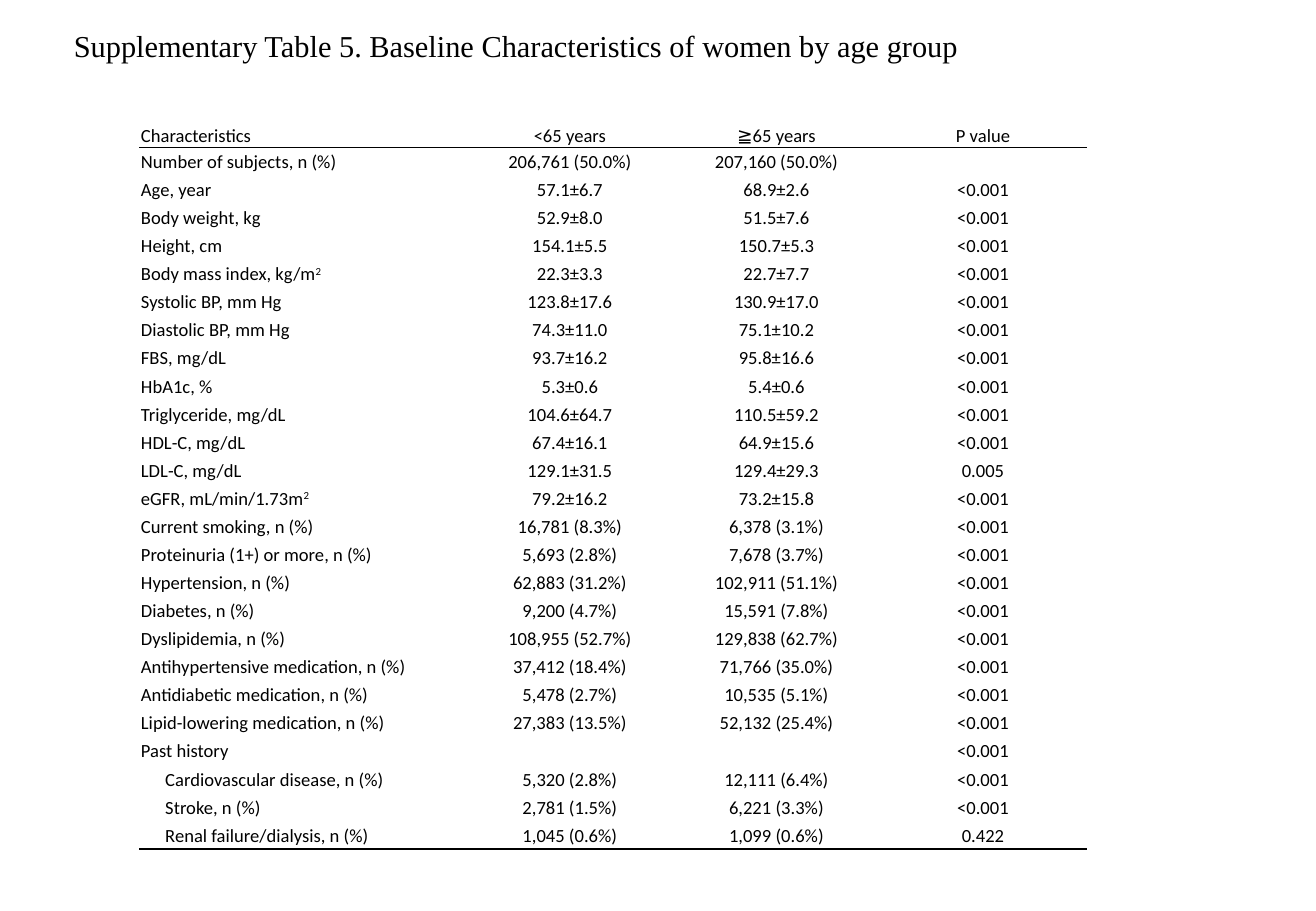
from lxml.etree import SubElement
from pptx import Presentation
from pptx.dml.color import RGBColor
from pptx.enum.text import MSO_ANCHOR, PP_ALIGN
from pptx.oxml.ns import qn
from pptx.util import Inches, Pt

SLIDE_W, SLIDE_H = Inches(10.83), Inches(7.5)
COLORS = {"ink": "000000", "paper": "FFFFFF"}
TABLE_FONT, TABLE_SIZE = "Calibri", 11

# Table grid, in inches
TABLE_LEFT, TABLE_TOP, TABLE_HEIGHT = 1.15, 1.02, 5.96
COLUMN_WIDTHS = (2.69, 1.7, 1.7, 1.7)
HEADER_HEIGHT = 0.18
CELL_INSET, SUBITEM_INSET = 0.01, 0.21

# Label, younger group, older group, P value; ^ starts a superscript
HEADER = ("Characteristics", "<65 years", "≧65 years", "P value")
LOW_P = "<0.001"
BASELINE = [
    ("Number of subjects, n (%)", "206,761 (50.0%)", "207,160 (50.0%)", ""),
    ("Age, year", "57.1±6.7", "68.9±2.6", LOW_P),
    ("Body weight, kg", "52.9±8.0", "51.5±7.6", LOW_P),
    ("Height, cm", "154.1±5.5", "150.7±5.3", LOW_P),
    ("Body mass index, kg/m^2", "22.3±3.3", "22.7±7.7", LOW_P),
    ("Systolic BP, mm Hg", "123.8±17.6", "130.9±17.0", LOW_P),
    ("Diastolic BP, mm Hg", "74.3±11.0", "75.1±10.2", LOW_P),
    ("FBS, mg/dL", "93.7±16.2", "95.8±16.6", LOW_P),
    ("HbA1c, %", "5.3±0.6", "5.4±0.6", LOW_P),
    ("Triglyceride, mg/dL", "104.6±64.7", "110.5±59.2", LOW_P),
    ("HDL-C, mg/dL", "67.4±16.1", "64.9±15.6", LOW_P),
    ("LDL-C, mg/dL", "129.1±31.5", "129.4±29.3", "0.005"),
    ("eGFR, mL/min/1.73m^2", "79.2±16.2", "73.2±15.8", LOW_P),
    ("Current smoking, n (%)", "16,781 (8.3%)", "6,378 (3.1%)", LOW_P),
    ("Proteinuria (1+) or more, n (%)", "5,693 (2.8%)", "7,678 (3.7%)", LOW_P),
    ("Hypertension, n (%)", "62,883 (31.2%)", "102,911 (51.1%)", LOW_P),
    ("Diabetes, n (%)", "9,200 (4.7%)", "15,591 (7.8%)", LOW_P),
    ("Dyslipidemia, n (%)", "108,955 (52.7%)", "129,838 (62.7%)", LOW_P),
    ("Antihypertensive medication, n (%)", "37,412 (18.4%)", "71,766 (35.0%)", LOW_P),
    ("Antidiabetic medication, n (%)", "5,478 (2.7%)", "10,535 (5.1%)", LOW_P),
    ("Lipid-lowering medication, n (%)", "27,383 (13.5%)", "52,132 (25.4%)", LOW_P),
    ("Past history", "", "", LOW_P),
]
PAST_HISTORY = [
    ("Cardiovascular disease, n (%)", "5,320 (2.8%)", "12,111 (6.4%)", LOW_P),
    ("Stroke, n (%)", "2,781 (1.5%)", "6,221 (3.3%)", LOW_P),
    ("Renal failure/dialysis, n (%)", "1,045 (0.6%)", "1,099 (0.6%)", "0.422"),
]


def style_font(font, name, size):
    font.name, font.size = name, Pt(size)
    font.color.rgb = RGBColor.from_string(COLORS["ink"])


def add_title(slide, text):
    title = slide.shapes.add_textbox(
        int(SLIDE_W * 0.047), int(SLIDE_H * 0.025), int(SLIDE_W * 0.862), int(SLIDE_H * 0.055))
    frame = title.text_frame
    frame.word_wrap = True
    frame.vertical_anchor = MSO_ANCHOR.MIDDLE
    paragraph = frame.paragraphs[0]
    paragraph.text = text
    paragraph.line_spacing = 0.9
    style_font(paragraph.font, "Times New Roman", 18)


def set_borders(cell, top, bottom):
    sides = {"L": "paper", "R": "paper", "T": top, "B": bottom}
    for side, color in sides.items():
        border = SubElement(cell._tc.get_or_add_tcPr(), qn(f"a:ln{side}"), w=str(Pt(1)))
        fill = SubElement(border, qn("a:solidFill"))
        SubElement(fill, qn("a:srgbClr"), val=COLORS[color])


def write_cell(cell, text, align, left_inset):
    cell.vertical_anchor = MSO_ANCHOR.MIDDLE
    cell.margin_left = Inches(left_inset)
    cell.margin_top = cell.margin_right = Inches(CELL_INSET)
    cell.margin_bottom = 0
    paragraph = cell.text_frame.paragraphs[0]
    paragraph.alignment = align
    style_font(paragraph.font, TABLE_FONT, TABLE_SIZE)
    base, _, superscript = text.partition("^")
    if base:
        paragraph.add_run().text = base
    else:
        # An empty cell keeps the small size so that its row stays low
        SubElement(paragraph._p, qn("a:endParaRPr"), sz=str(TABLE_SIZE * 100))
    if superscript:
        raised = paragraph.add_run()
        raised.text = superscript
        raised.font._element.set("baseline", "30000")


def add_baseline_table(slide):
    rows = [HEADER] + BASELINE + PAST_HISTORY
    last = len(rows) - 1
    first_subitem = len(rows) - len(PAST_HISTORY)
    table = slide.shapes.add_table(
        len(rows), len(HEADER), Inches(TABLE_LEFT), Inches(TABLE_TOP),
        Inches(sum(COLUMN_WIDTHS)), Inches(TABLE_HEIGHT)).table
    table.first_row = table.horz_banding = False
    for column, width in zip(table.columns, COLUMN_WIDTHS):
        column.width = Inches(width)

    body_height = (TABLE_HEIGHT - HEADER_HEIGHT) / last
    for r, values in enumerate(rows):
        table.rows[r].height = Inches(body_height if r else HEADER_HEIGHT)
        # Rules run under the header and under the last row
        top = "ink" if r == 1 else "paper"
        bottom = "ink" if r in (0, last) else "paper"
        for c, value in enumerate(values):
            cell = table.cell(r, c)
            is_subitem = c == 0 and r >= first_subitem
            write_cell(cell, value, PP_ALIGN.CENTER if c else PP_ALIGN.LEFT,
                       SUBITEM_INSET if is_subitem else CELL_INSET)
            set_borders(cell, top, bottom)
            cell.fill.background()


def main():
    presentation = Presentation()
    presentation.slide_width, presentation.slide_height = SLIDE_W, SLIDE_H
    slide = presentation.slides.add_slide(presentation.slide_layouts[6])
    add_title(slide, "Supplementary Table 5. Baseline Characteristics of women by age group")
    add_baseline_table(slide)
    presentation.save("out.pptx")


if __name__ == "__main__":
    main()
